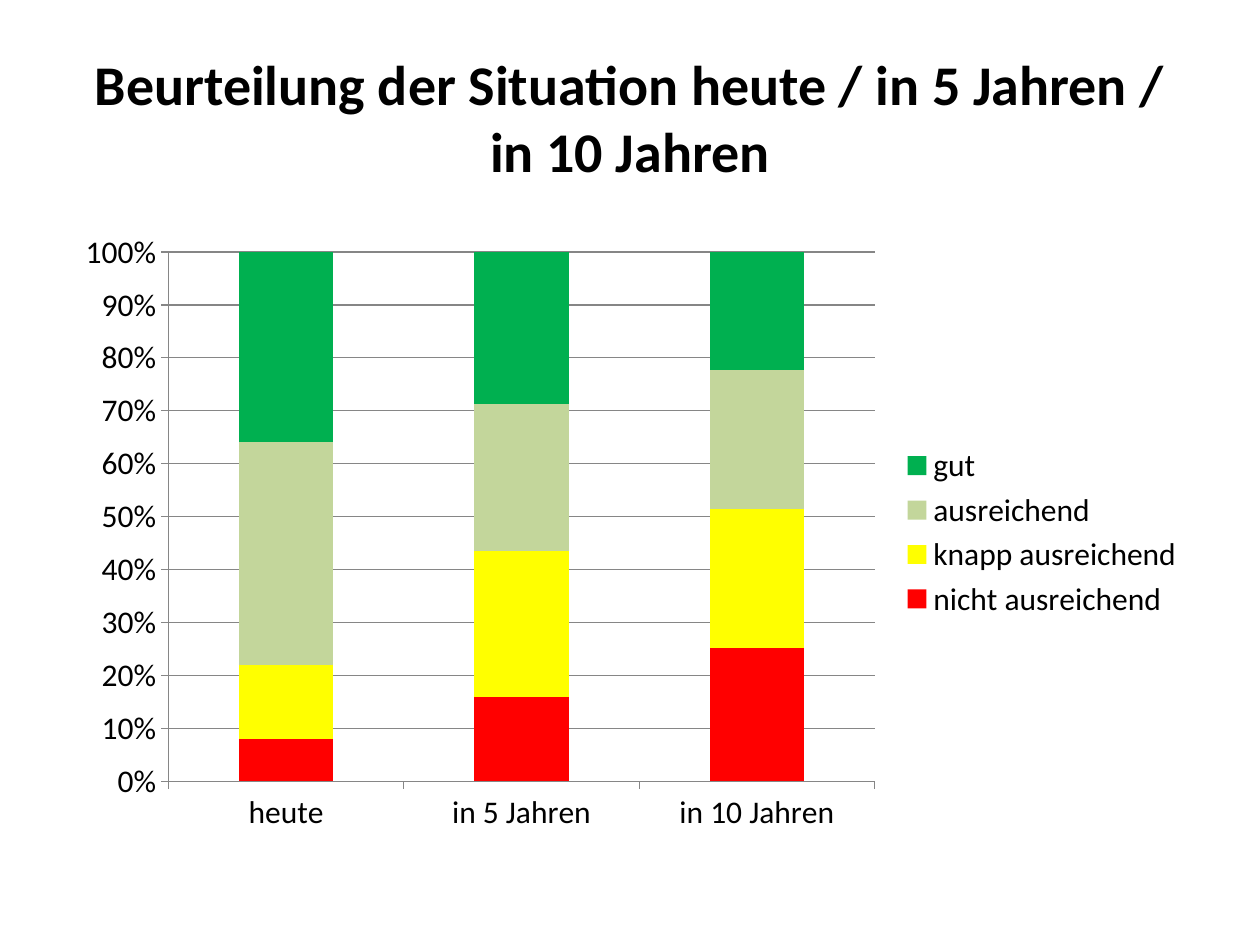
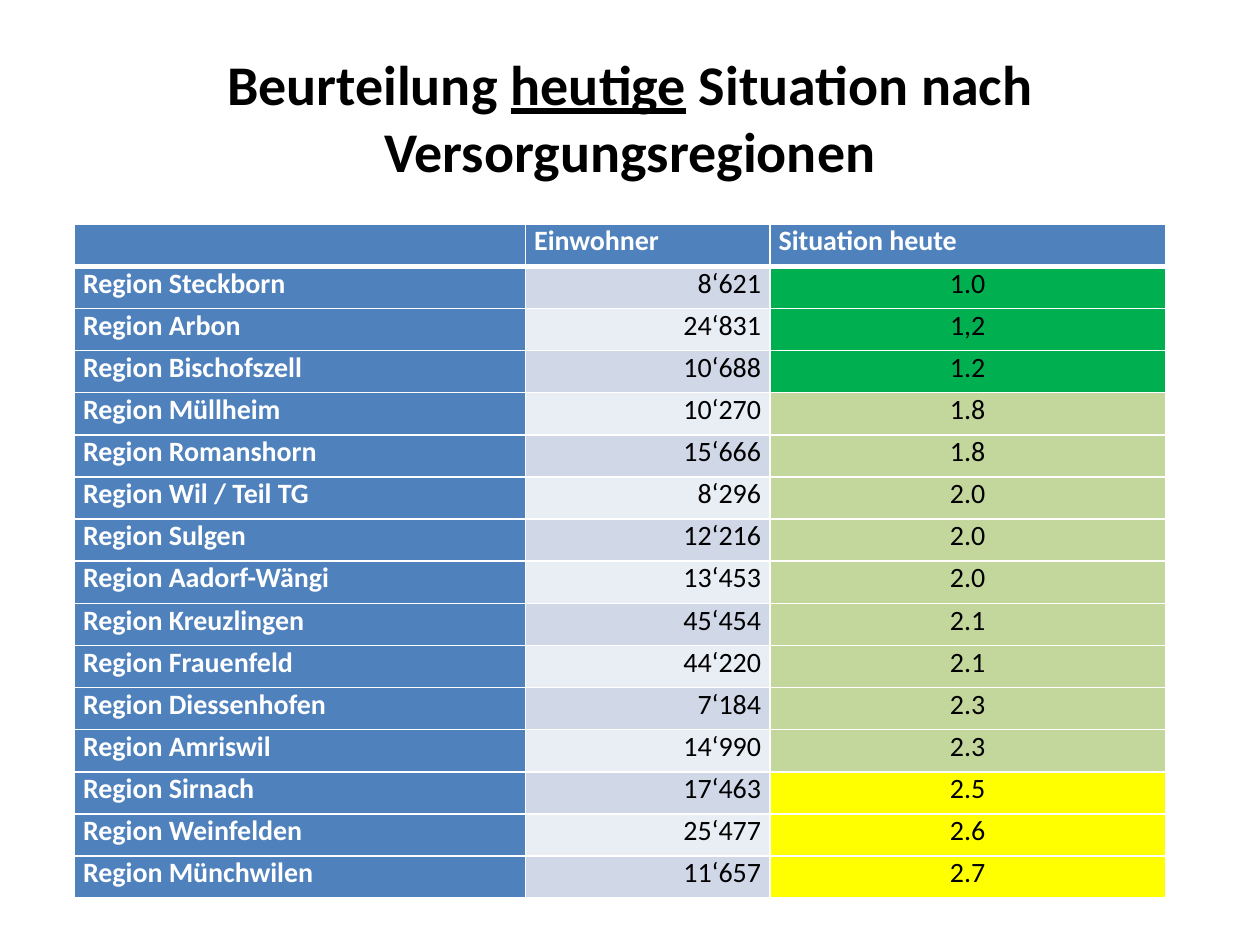
from typing import NamedTuple

from lxml.etree import SubElement
from pptx import Presentation
from pptx.chart.data import CategoryChartData
from pptx.dml.color import RGBColor
from pptx.enum.chart import XL_CHART_TYPE, XL_LEGEND_POSITION, XL_TICK_MARK
from pptx.enum.text import MSO_ANCHOR, PP_ALIGN
from pptx.oxml.ns import qn
from pptx.util import Emu, Pt

SCALE = 9144
FONT = "Calibri"
BLACK, WHITE, GREY = "000000", "FFFFFF", "868686"
RED, YELLOW, LIGHT, GREEN = "FF0000", "FFFF00", "C3D69B", "00B050"
BLUE = "4F81BD"
BANDS = ("D0D8E8", "E9EDF4")


class Box(NamedTuple):
    left: int
    top: int
    width: int
    height: int


class Part(NamedTuple):
    text: str
    under: bool = False


class Series(NamedTuple):
    name: str
    values: tuple
    fill: str


class Region(NamedTuple):
    name: str
    people: str
    mark: str


class Look(NamedTuple):
    fill: str
    ink: str = BLACK
    bold: bool = False
    align: PP_ALIGN = PP_ALIGN.LEFT


TITLE = Box(50, 30, 900, 125)
CHART = Box(50, 175, 900, 495)
TABLE = Box(59, 178, 866, 535)
WIDTHS = (358, 194, 314)
HEADS = ("", "Einwohner", "Situation heute")
TIMES = ("heute", "in 5 Jahren", "in 10 Jahren")
RATINGS = (
    Series("nicht ausreichend", (8, 16, 25), RED),
    Series("knapp ausreichend", (14, 28, 26), YELLOW),
    Series("ausreichend", (42, 28, 26), LIGHT),
    Series("gut", (36, 29, 22), GREEN),
)
REGIONS = (
    Region("Steckborn", "8‘621", "1.0"),
    Region("Arbon", "24‘831", "1,2"),
    Region("Bischofszell", "10‘688", "1.2"),
    Region("Müllheim", "10‘270", "1.8"),
    Region("Romanshorn", "15‘666", "1.8"),
    Region("Wil / Teil TG", "8‘296", "2.0"),
    Region("Sulgen", "12‘216", "2.0"),
    Region("Aadorf-Wängi", "13‘453", "2.0"),
    Region("Kreuzlingen", "45‘454", "2.1"),
    Region("Frauenfeld", "44‘220", "2.1"),
    Region("Diessenhofen", "7‘184", "2.3"),
    Region("Amriswil", "14‘990", "2.3"),
    Region("Sirnach", "17‘463", "2.5"),
    Region("Weinfelden", "25‘477", "2.6"),
    Region("Münchwilen", "11‘657", "2.7"),
)


def px(count: int) -> Emu:
    return Emu(count * SCALE)


def place(box: Box) -> tuple:
    return tuple(px(side) for side in box)


def tint(code: str) -> RGBColor:
    return RGBColor.from_string(code)


def style(font, size: int, ink: str = BLACK, bold: bool = False) -> None:
    font.name = FONT
    font.size = Pt(size)
    font.bold = bold
    font.color.rgb = tint(ink)


def paint(fill, code: str) -> None:
    fill.solid()
    fill.fore_color.rgb = tint(code)


def start(deck, *parts: Part):
    slide = deck.slides.add_slide(deck.slide_layouts[5])
    title = slide.shapes.title
    title.left, title.top, title.width, title.height = place(TITLE)
    title.text_frame.vertical_anchor = MSO_ANCHOR.MIDDLE
    line = title.text_frame.paragraphs[0]
    line.alignment = PP_ALIGN.CENTER
    for part in parts:
        run = line.add_run()
        run.text = part.text
        style(run.font, 32, bold=True)
        run.font.underline = part.under
    return slide


def add_bars(slide) -> None:
    data = CategoryChartData(number_format="0")
    data.categories = TIMES
    for rating in RATINGS:
        data.add_series(rating.name, rating.values)
    kind = XL_CHART_TYPE.COLUMN_STACKED_100
    chart = slide.shapes.add_chart(kind, *place(CHART), data).chart
    style(chart.font, 18)
    chart.has_title = False
    chart.has_legend = True
    chart.legend.position = XL_LEGEND_POSITION.RIGHT
    chart.legend.include_in_layout = False

    plot = chart.plots[0]
    plot.gap_width = 150
    plot.overlap = 100
    plot.vary_by_categories = False
    for bar, rating in zip(plot.series, RATINGS):
        paint(bar.format.fill, rating.fill)

    scale = chart.value_axis
    scale.has_major_gridlines = True
    scale.tick_labels.number_format = "0%"
    scale.tick_labels.number_format_is_linked = False
    for axis in (scale, chart.category_axis):
        axis.major_tick_mark = XL_TICK_MARK.OUTSIDE
        axis.minor_tick_mark = XL_TICK_MARK.NONE
    for item in (scale, chart.category_axis, scale.major_gridlines):
        item.format.line.color.rgb = tint(GREY)
        item.format.line.width = Pt(0.75)


def frame(cell, top: int, base: int) -> None:
    props = cell._tc.get_or_add_tcPr()
    for side, width in (("L", 1), ("R", 1), ("T", top), ("B", base)):
        edge = SubElement(props, qn(f"a:ln{side}"), w=str(Pt(width)))
        fill = SubElement(edge, qn("a:solidFill"))
        SubElement(fill, qn("a:srgbClr"), val=WHITE)


def write(cell, text: str, look: Look) -> None:
    paint(cell.fill, look.fill)
    cell.margin_left = cell.margin_right = px(7)
    cell.margin_top = cell.margin_bottom = 0
    if not text:
        return
    line = cell.text_frame.paragraphs[0]
    line.alignment = look.align
    line.space_before = line.space_after = Pt(1)
    run = line.add_run()
    run.text = text
    style(run.font, 16, look.ink, look.bold)


def grade(mark: str) -> str:
    value = float(mark.replace(",", "."))
    if value < 1.5:
        return GREEN
    return LIGHT if value < 2.5 else YELLOW


def add_grid(slide) -> None:
    count = len(REGIONS) + 1
    shape = slide.shapes.add_table(count, len(HEADS), *place(TABLE))
    table = shape.table
    table.first_row = True
    table.first_col = True
    table.horz_banding = False
    for column, width in zip(table.columns, WIDTHS):
        column.width = px(width)

    head = Look(BLUE, WHITE, True)
    rows = [tuple((text, head) for text in HEADS)]
    for index, region in enumerate(REGIONS):
        rows.append((
            (f"Region {region.name}", head),
            (region.people, Look(BANDS[index % 2], align=PP_ALIGN.RIGHT)),
            (region.mark, Look(grade(region.mark), align=PP_ALIGN.CENTER)),
        ))
    for r, row in enumerate(rows):
        table.rows[r].height = px(TABLE.height) // count
        for c, (text, look) in enumerate(row):
            cell = table.cell(r, c)
            frame(cell, 3 if r == 1 else 1, 3 if r == 0 else 1)
            write(cell, text, look)


def main() -> None:
    deck = Presentation()
    deck.slide_width, deck.slide_height = px(1000), px(750)
    add_bars(start(
        deck, Part("Beurteilung der Situation heute / in 5 Jahren / in 10 Jahren")
    ))
    add_grid(start(
        deck,
        Part("Beurteilung "),
        Part("heutige", True),
        Part(" Situation nach Versorgungsregionen"),
    ))
    deck.save("out.pptx")


if __name__ == "__main__":
    main()
